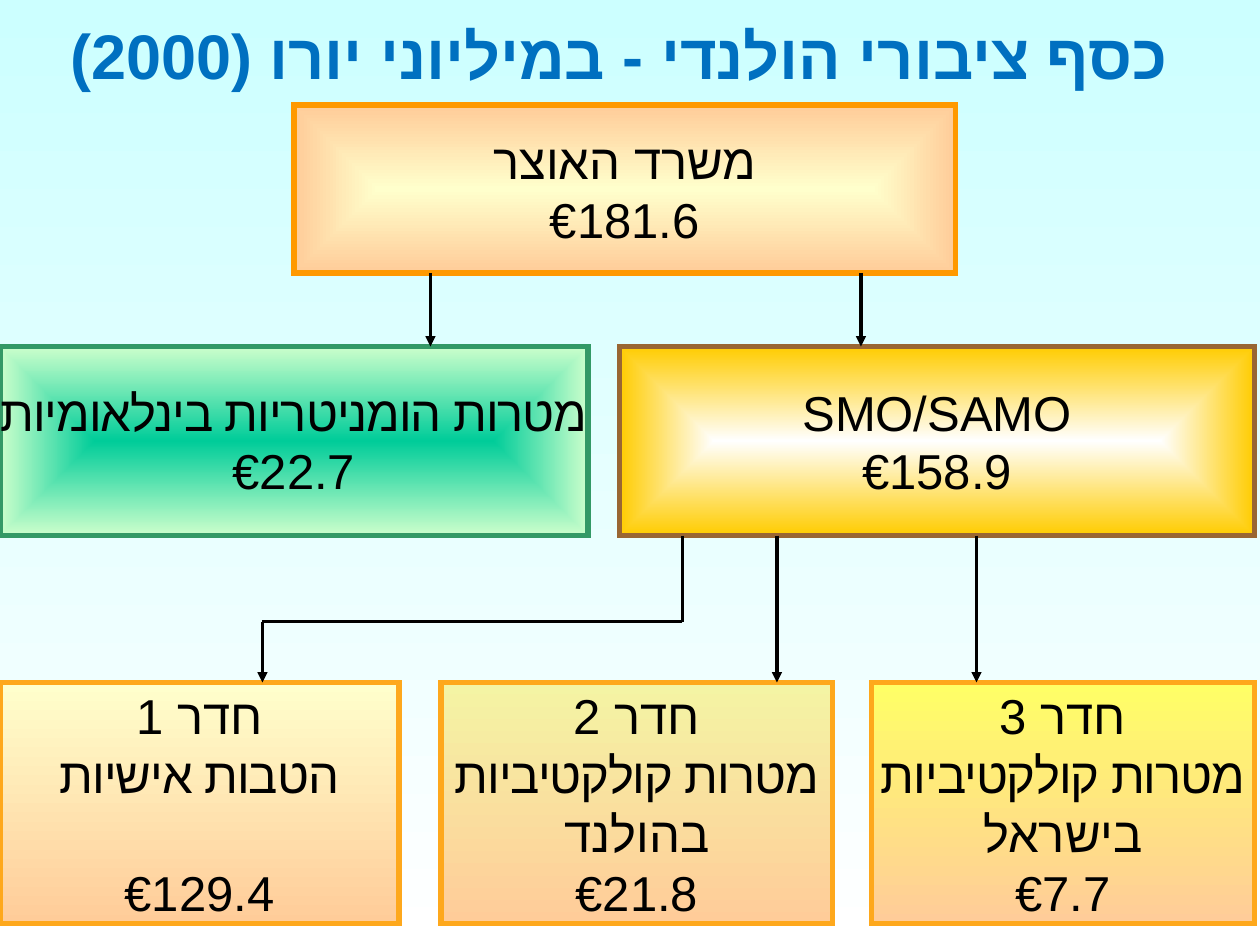
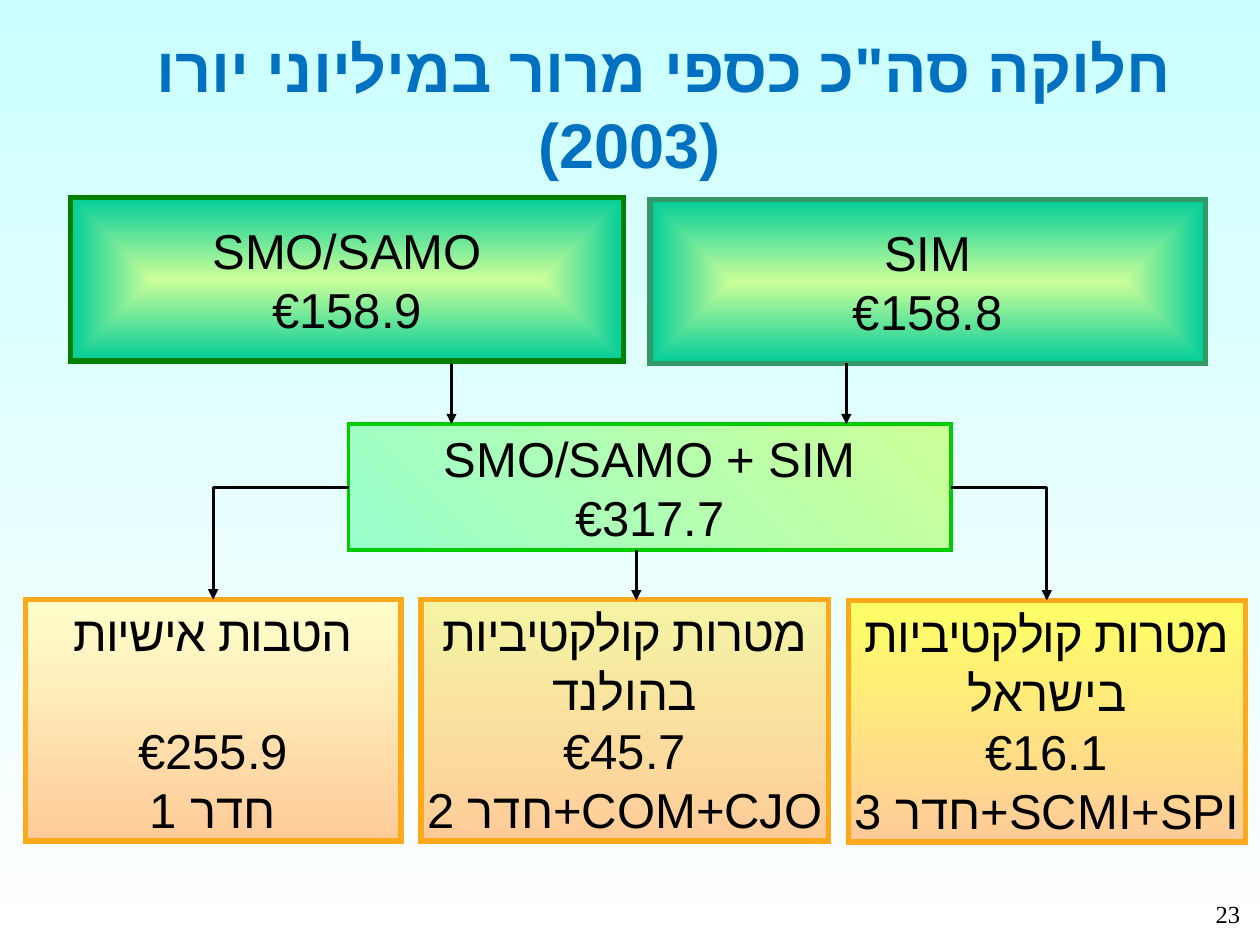
"""Build two flow-chart slides on the division of restitution money."""
from lxml.etree import SubElement
from pptx import Presentation
from pptx.dml.color import RGBColor
from pptx.enum.shapes import MSO_CONNECTOR, MSO_SHAPE
from pptx.enum.text import MSO_ANCHOR, MSO_AUTO_SIZE, PP_ALIGN
from pptx.oxml.ns import qn
from pptx.util import Inches, Pt

BLACK = RGBColor(0x00, 0x00, 0x00)
WHITE = RGBColor(0xFF, 0xFF, 0xFF)
TITLE_BLUE = RGBColor(0x00, 0x70, 0xC0)
PALE_CYAN = RGBColor(0xCC, 0xFF, 0xFF)
CREAM = RGBColor(0xFF, 0xFF, 0xCC)
PEACH = RGBColor(0xFF, 0xCC, 0x99)
KHAKI = RGBColor(0xF4, 0xF4, 0xA4)
YELLOW = RGBColor(0xFF, 0xFF, 0x66)
GOLD = RGBColor(0xFF, 0xCC, 0x00)
ORANGE = RGBColor(0xFF, 0x99, 0x00)
AMBER = RGBColor(0xFE, 0xA8, 0x1C)
BROWN = RGBColor(0x99, 0x66, 0x33)
TEAL = RGBColor(0x00, 0xCC, 0x99)
MINT = RGBColor(0xCC, 0xFF, 0xCC)
AQUA = RGBColor(0x99, 0xFF, 0xCC)
LIME = RGBColor(0xCC, 0xFF, 0x99)
SEA_GREEN = RGBColor(0x33, 0x99, 0x66)
DARK_GREEN = RGBColor(0x00, 0x80, 0x00)
BRIGHT_GREEN = RGBColor(0x00, 0xCC, 0x00)

COLUMNS, ROWS = 120, 90
DOWN, DIAGONAL, FROM_CENTRE = 270, 45, None
SKIPPED_LINE = Pt(34)
LONG_LABEL_STARTS = ("מטרות", "הטבות")
LONG_LABEL_SPACING = "-60"

SLIDES = [
    {
        "title": "כסף ציבורי הולנדי - במיליוני יורו (2000)",
        "title_cells": (0, 1, 118, 8.4),
        "title_indent": 0,
        "boxes": [
            ((28, 10, 63, 16), CREAM, PEACH, FROM_CENTRE, ORANGE, 3, "משרד האוצר\n€181.6"),
            ((0, 33, 56, 18), TEAL, MINT, FROM_CENTRE, SEA_GREEN, 3,
             "מטרות הומניטריות בינלאומיות\n€22.7"),
            ((59, 33, 60.5, 18), WHITE, GOLD, FROM_CENTRE, BROWN, 3, "SMO/SAMO\n€158.9"),
            ((0, 65, 38, 23), CREAM, PEACH, DOWN, AMBER, 3, "חדר 1\nהטבות אישיות\n€129.4"),
            ((42, 65, 37.3, 23), KHAKI, PEACH, DOWN, AMBER, 3,
             "חדר 2\nמטרות קולקטיביות\nבהולנד\n€21.8"),
            ((83, 65, 36.5, 23), YELLOW, PEACH, DOWN, AMBER, 3,
             "חדר 3\nמטרות קולקטיביות\nבישראל\n€7.7"),
        ],
        "routes": [
            [(41, 26), (41, 33)],
            [(82, 26), (82, 33)],
            [(65, 51), (65, 59.2), (25, 59.2), (25, 65)],
            [(74, 51), (74, 65)],
            [(93, 51), (93, 65)],
        ],
        "elbows": [],
        "number": None,
    },
    {
        "title": "חלוקה סה\"כ כספי מרור במיליוני יורו (2003)",
        "title_cells": (0.5, 2.2, 119, 8.5),
        "title_indent": Inches(0.54),
        "boxes": [
            ((6.7, 18.8, 52.7, 15.6), LIME, TEAL, FROM_CENTRE, DARK_GREEN, 3, "SMO/SAMO\n€158.9"),
            ((61.9, 19, 52.9, 15.6), LIME, TEAL, FROM_CENTRE, SEA_GREEN, 3, "SIM\n€158.8"),
            ((33.2, 40.4, 57.4, 12), AQUA, LIME, DIAGONAL, BRIGHT_GREEN, 2.25,
             "SMO/SAMO + SIM\n€317.7"),
            ((2.4, 57.1, 35.8, 23), CREAM, PEACH, DOWN, AMBER, 3, "הטבות אישיות\n€255.9\nחדר 1"),
            ((40.1, 57.1, 38.8, 23), KHAKI, PEACH, DOWN, AMBER, 3,
             "מטרות קולקטיביות\nבהולנד\n€45.7\nחדר 2+COM+CJO"),
            ((80.8, 57.2, 37.8, 23), YELLOW, PEACH, DOWN, AMBER, 3,
             "מטרות קולקטיביות\nבישראל\n€16.1\nחדר 3+SCMI+SPI"),
        ],
        "routes": [
            [(60.6, 52.4), (60.6, 57.2)],
            [(80.6, 34.6), (80.6, 40.4)],
            [(43, 34.7), (43, 40.4)],
        ],
        "elbows": [(2, 1, 3), (2, 3, 5)],
        "number": "23",
    },
]


def paint_gradient(fill, start, end, angle):
    fill.gradient()
    fill.gradient_angle = angle
    for stop, color in zip(fill.gradient_stops, (start, end)):
        stop.color.rgb = color


def format_text(text_frame, font_name, size, color, bold=False):
    for paragraph in text_frame.paragraphs:
        paragraph.alignment = PP_ALIGN.CENTER
        paragraph.space_before = Pt(0)
        for run in paragraph.runs:
            run.font.name = font_name
            run.font.size = Pt(size)
            run.font.bold = bold
            run.font.color.rgb = color
            SubElement(run.font._element, qn("a:cs"), typeface=font_name)


presentation = Presentation()
presentation.slide_width = Inches(10)
presentation.slide_height = Inches(7.5)
column = presentation.slide_width / COLUMNS
row = presentation.slide_height / ROWS
paint_gradient(presentation.slide_master.background.fill, PALE_CYAN, WHITE, DOWN)

for content in SLIDES:
    slide = presentation.slides.add_slide(presentation.slide_layouts[5])

    title = slide.shapes.title
    left, top, width, height = content["title_cells"]
    title.left, title.top = int(left * column), int(top * row)
    title.width, title.height = int(width * column), int(height * row)
    title.text_frame.text = content["title"]
    title.text_frame.word_wrap = True
    title.text_frame.auto_size = MSO_AUTO_SIZE.SHAPE_TO_FIT_TEXT
    title.text_frame.vertical_anchor = MSO_ANCHOR.TOP
    format_text(title.text_frame, "Arial", 36, TITLE_BLUE, bold=True)
    title_properties = title.text_frame.paragraphs[0]._p.get_or_add_pPr()
    title_properties.set("indent", str(content["title_indent"]))

    boxes = []
    for (left, top, width, height), start, end, angle, border, border_width, text in content["boxes"]:
        box = slide.shapes.add_shape(
            MSO_SHAPE.RECTANGLE,
            int(left * column), int(top * row), int(width * column), int(height * row))
        box.shadow.inherit = False
        paint_gradient(box.fill, start, end, angle or 0)
        if angle is FROM_CENTRE:
            gradient = box._element.spPr.find(qn("a:gradFill"))
            gradient.remove(gradient.find(qn("a:lin")))
            shading = SubElement(gradient, qn("a:path"), path="shape")
            SubElement(shading, qn("a:fillToRect"), l="50000", t="50000", r="50000", b="50000")
        box.line.color.rgb = border
        box.line.width = Pt(border_width)
        SubElement(box.line._get_or_add_ln(), qn("a:miter"), lim="800000")
        box.text_frame.text = text
        box.text_frame.word_wrap = False
        box.text_frame.vertical_anchor = MSO_ANCHOR.MIDDLE
        format_text(box.text_frame, "Arial", 28, BLACK)
        has_skipped_line = len(box.text_frame.paragraphs) == 3
        for paragraph in box.text_frame.paragraphs:
            if has_skipped_line and paragraph.text.startswith("€"):
                paragraph.space_before = SKIPPED_LINE
            if paragraph.text.startswith(LONG_LABEL_STARTS):
                paragraph.runs[0].font._element.set("spc", LONG_LABEL_SPACING)
        boxes.append(box)

    connectors, arrows = [], []
    for route in content["routes"]:
        for (start_x, start_y), (end_x, end_y) in zip(route, route[1:]):
            connectors.append(slide.shapes.add_connector(
                MSO_CONNECTOR.STRAIGHT,
                int(start_x * column), int(start_y * row), int(end_x * column), int(end_y * row)))
        arrows.append(connectors[-1])
    for source, side, target in content["elbows"]:
        elbow = slide.shapes.add_connector(MSO_CONNECTOR.ELBOW, 0, 0, 0, 0)
        elbow.begin_connect(boxes[source], side)
        elbow.end_connect(boxes[target], 0)
        elbow._element.spPr.find(qn("a:prstGeom")).set("prst", "bentConnector2")
        connectors.append(elbow)
        arrows.append(elbow)
    for connector in connectors:
        connector.line.color.rgb = BLACK
        connector.line.width = Pt(1.75)
        SubElement(connector._element.spPr, qn("a:effectLst"))
    for arrow in arrows:
        SubElement(arrow.line._get_or_add_ln(), qn("a:tailEnd"), type="triangle")

    if content["number"]:
        number = slide.shapes.add_textbox(
            int(113.9 * column), int(85 * row), int(6.1 * column), int(5 * row))
        number.text_frame.text = content["number"]
        number.text_frame.word_wrap = True
        format_text(number.text_frame, "Times New Roman", 14, BLACK)

presentation.save("out.pptx")
